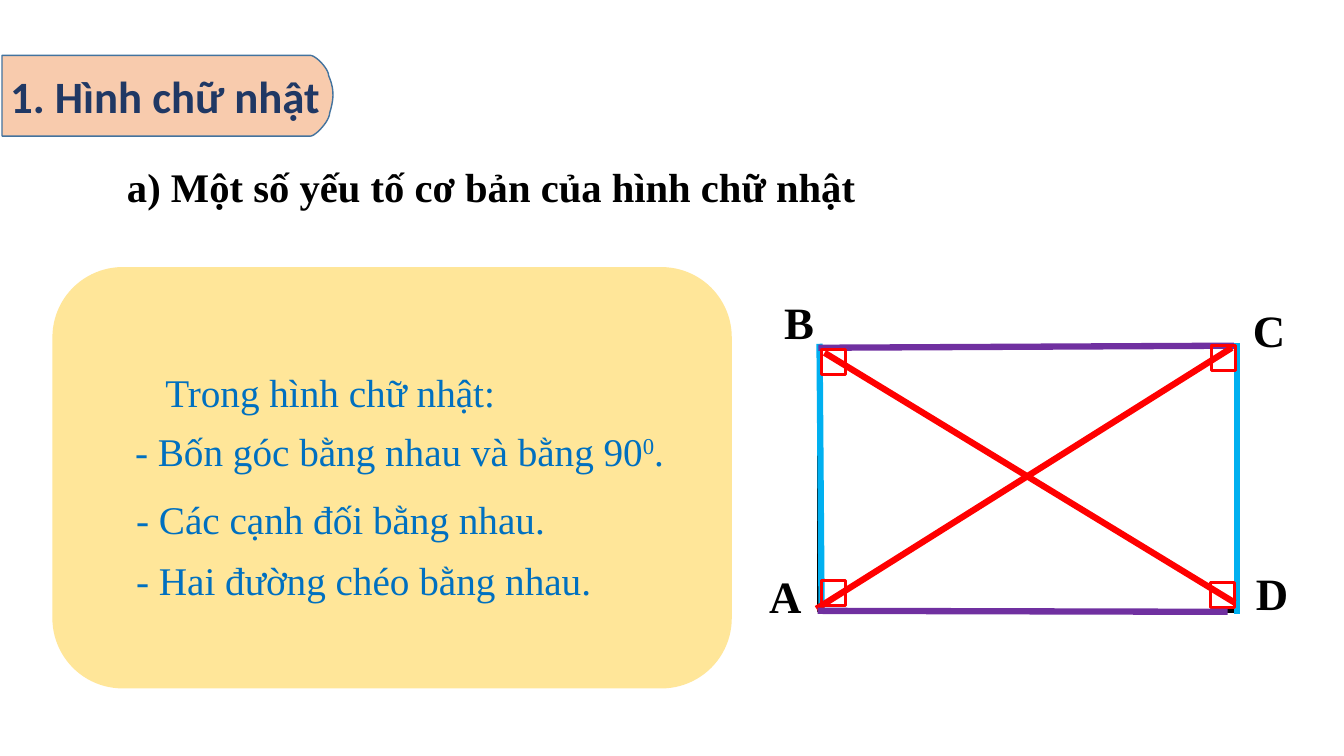
from dataclasses import dataclass

from lxml.etree import SubElement
from pptx import Presentation
from pptx.dml.color import RGBColor
from pptx.enum.shapes import MSO_CONNECTOR as Connector, MSO_SHAPE as Preset
from pptx.enum.text import MSO_ANCHOR as Anchor, MSO_AUTO_SIZE as AutoSize, PP_ALIGN as Align
from pptx.oxml.ns import qn
from pptx.util import Emu, Inches, Pt

WIDTH, HEIGHT = Inches(13.33), Inches(7.5)
SERIF = "Times New Roman"
BLACK, RED, SKY, PURPLE, BLUE = "000000", "FF0000", "00B0F0", "7030A0", "0070C0"


@dataclass(frozen=True)
class Box:
    """Percentages of the slide's width and height."""
    left: float
    top: float
    width: float
    height: float


@dataclass(frozen=True)
class Segment:
    start: tuple[float, float]
    end: tuple[float, float]
    color: str


@dataclass(frozen=True)
class Label:
    text: str
    box: Box
    size: float
    color: str = BLACK
    bold: bool = True
    superscript: str = ""
    ending: str = ""


def across(share: float) -> Emu:
    return Emu(round(WIDTH * share / 100))


def down(share: float) -> Emu:
    return Emu(round(HEIGHT * share / 100))


def place(box: Box) -> tuple[Emu, Emu, Emu, Emu]:
    return across(box.left), down(box.top), across(box.width), down(box.height)


def rgb(color: str) -> RGBColor:
    return RGBColor.from_string(color)


def paint(shape, fill: str = "", line: str = "", weight: float = 1) -> None:
    shape.shadow.inherit = False
    if fill:
        shape.fill.solid()
        shape.fill.fore_color.rgb = rgb(fill)
    else:
        shape.fill.background()
    if line:
        shape.line.color.rgb = rgb(line)
        shape.line.width = Pt(weight)
    else:
        shape.line.fill.background()


def style(paragraph, name: str, size: float, color: str, bold: bool) -> None:
    font = paragraph.font
    font.name, font.size, font.bold = name, Pt(size), bold
    font.color.rgb = rgb(color)


def draw_shape(slide, preset: Preset, box: Box, **look):
    shape = slide.shapes.add_shape(preset, *place(box))
    paint(shape, **look)
    return shape


def draw_segment(slide, segment: Segment) -> None:
    (x1, y1), (x2, y2) = segment.start, segment.end
    connector = slide.shapes.add_connector(
        Connector.STRAIGHT, across(x1), down(y1), across(x2), down(y2))
    connector.line.color.rgb = rgb(segment.color)
    connector.line.width = Pt(4.5)
    SubElement(connector.element.spPr, qn("a:effectLst"))


def draw_label(slide, label: Label) -> None:
    frame = slide.shapes.add_textbox(*place(label.box)).text_frame
    frame.word_wrap = True
    frame.margin_left = frame.margin_right = Inches(0.12)
    frame.margin_top = frame.margin_bottom = Inches(0.06)
    paragraph = frame.paragraphs[0]
    style(paragraph, SERIF, label.size, label.color, label.bold)
    paragraph.add_run().text = label.text
    if label.superscript:
        raised = paragraph.add_run()
        raised.text = label.superscript
        raised.font.size = Pt(label.size)
        raised.font._element.set("baseline", "30000")
        paragraph.add_run().text = label.ending


def bezier(points: list[tuple[float, float]], steps: int = 12) -> list[tuple[float, float]]:
    curve = []
    for step in range(1, steps + 1):
        t = step / steps
        weights = ((1 - t) ** 3, 3 * t * (1 - t) ** 2, 3 * t * t * (1 - t), t ** 3)
        curve.append(tuple(sum(w * p[axis] for w, p in zip(weights, points))
                           for axis in (0, 1)))
    return curve


def draw_tab(slide):
    curves = [
        [(23.1, 7.33), (23.48, 7.33), (24.45, 9.07), (24.45, 10)],
        [(24.45, 10), (24.83, 11.6), (24.9, 12.8), (24.53, 14.93)],
        [(24.53, 14.93), (24.53, 16), (23.48, 18), (23.1, 18)],
    ]
    outline = [(23.1, 7.33)] + [point for curve in curves for point in bezier(curve)]
    outline.append((0.15, 18))
    builder = slide.shapes.build_freeform(across(0.15), down(7.33))
    builder.add_line_segments([(across(x), down(y)) for x, y in outline], close=True)
    tab = builder.convert_to_shape()
    paint(tab, fill="F8CBAD", line="43739E")
    return tab


def draw_title(slide, text: str, box: Box) -> None:
    tab = draw_tab(slide)
    title = slide.shapes.title
    tab.element.addnext(title.element)
    title.left, title.top, title.width, title.height = place(box)
    frame = title.text_frame
    frame.text = text
    frame.word_wrap = False
    frame.auto_size = AutoSize.NONE
    frame.vertical_anchor = Anchor.MIDDLE
    frame.paragraphs[0].alignment = Align.LEFT
    style(frame.paragraphs[0], "Calibri", 32, "203864", True)


SIDES_AND_DIAGONALS = [
    Segment((61.13, 80.4), (60.98, 45.47), SKY),
    Segment((92.03, 81.2), (92.03, 45.33), SKY),
    Segment((60.9, 46), (91.8, 45.73), PURPLE),
    Segment((61.35, 46.67), (91.88, 79.73), RED),
    Segment((60.75, 80.53), (91.65, 46), RED),
]
BOTTOM_SIDE = Segment((60.83, 80.8), (91.35, 80.93), PURPLE)
RIGHT_ANGLES = [(61.13, 46.27), (61.13, 76.8), (90.08, 77.07), (90.15, 45.73)]
VERTICES = [
    Label("A", Box(56.33, 74.4, 4.13, 8.8), 32),
    Label("B", Box(57.45, 38.13, 3.45, 8.8), 32),
    Label("C", Box(92.33, 39.2, 4.13, 8.8), 32),
    Label("D", Box(92.55, 74, 4.13, 8.8), 32),
]
STATEMENTS = [
    Label("Trong hình chữ nhật:", Box(11.4, 47.87, 32.93, 7.87), 28, BLUE, False),
    Label("- Bốn góc bằng nhau và bằng 90", Box(9.15, 55.73, 44.63, 7.87), 28, BLUE, False,
          superscript="0", ending="."),
    Label("- Các cạnh đối bằng nhau.", Box(9.23, 64.67, 34.13, 7.87), 28, BLUE, False),
    Label("- Hai đường chéo bằng nhau.", Box(9.23, 72.8, 38.1, 7.87), 28, BLUE, False),
]
SUBTITLE = Label("a) Một số yếu tố cơ bản của hình chữ nhật", Box(8.55, 20.67, 64.8, 8.13), 29)


def main() -> None:
    presentation = Presentation()
    presentation.slide_width, presentation.slide_height = WIDTH, HEIGHT
    slide = presentation.slides.add_slide(presentation.slide_layouts.get_by_name("Title Only"))
    draw_title(slide, "1. Hình chữ nhật", Box(0, 8.4, 24.75, 8.53))
    draw_shape(slide, Preset.RECTANGLE, Box(60.98, 45.87, 31.05, 34.93), line=BLACK, weight=3)
    for segment in SIDES_AND_DIAGONALS:
        draw_segment(slide, segment)
    for left, top in RIGHT_ANGLES:
        draw_shape(slide, Preset.RECTANGLE, Box(left, top, 1.8, 3.33), line=RED, weight=2.25)
    draw_segment(slide, BOTTOM_SIDE)
    draw_shape(slide, Preset.ROUNDED_RECTANGLE, Box(3.9, 35.33, 50.55, 55.73), fill="FFE699")
    for label in [*VERTICES, *STATEMENTS, SUBTITLE]:
        draw_label(slide, label)
    presentation.save("out.pptx")


if __name__ == "__main__":
    main()
